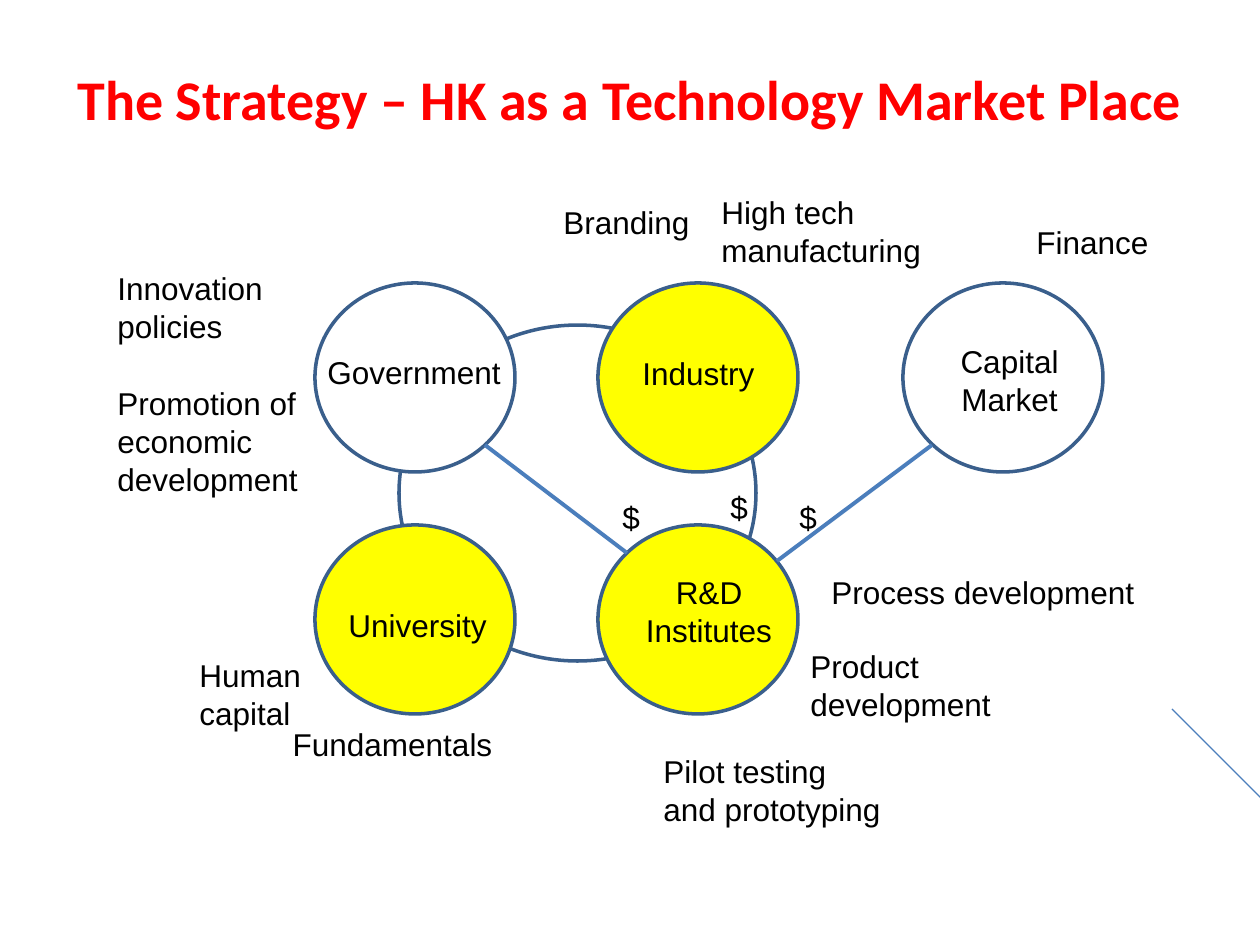
from lxml.etree import SubElement
from pptx import Presentation
from pptx.dml.color import RGBColor
from pptx.enum.shapes import MSO_CONNECTOR as Connector, MSO_SHAPE as Shape
from pptx.enum.text import MSO_ANCHOR as Anchor, PP_ALIGN as Align
from pptx.oxml.ns import qn
from pptx.util import Emu, Pt

PX = 914400 / 126
WHITE = RGBColor(0xFF, 0xFF, 0xFF)
YELLOW = RGBColor(0xFF, 0xFF, 0x00)
RED = RGBColor(0xFF, 0x00, 0x00)
BLACK = RGBColor(0x00, 0x00, 0x00)
OUTLINE = RGBColor(0x3A, 0x5F, 0x8C)
LINK = RGBColor(0x4B, 0x7E, 0xBC)

LABEL_FONT = {"name": "Arial", "size": Pt(18), "bold": False}
TITLE_FONT = {"name": "Calibri", "size": Pt(32), "bold": True}


def px(*lengths):
    return [Emu(round(length * PX)) for length in lengths]


def add_text(words, box, align=Align.LEFT, font=LABEL_FONT, color=BLACK,
             anchor=Anchor.TOP, wrap=True):
    frame = slide.shapes.add_textbox(*px(*box)).text_frame
    frame.word_wrap = wrap
    frame.vertical_anchor = anchor
    paragraph = frame.paragraphs[0]
    paragraph.alignment = align
    run = paragraph.add_run()
    run.text = words
    for key, value in font.items():
        setattr(run.font, key, value)
    run.font.color.rgb = color


prs = Presentation()
prs.slide_width, prs.slide_height = px(1260, 945)
slide = prs.slides.add_slide(prs.slide_layouts[6])

# Circles of the players, with the ring that ties four of them together
COLUMNS = [315, 598, 903]
ROWS = [283, 525]
CIRCLE = (200, 189)
circles = [
    ((COLUMNS[2], ROWS[0], *CIRCLE), WHITE),    # capital market
    ((399, 325, 357, 336), None),               # ring
    ((COLUMNS[0], ROWS[0], *CIRCLE), WHITE),    # government
    ((COLUMNS[0], ROWS[1], *CIRCLE), YELLOW),   # university
    ((COLUMNS[1], ROWS[1], *CIRCLE), YELLOW),   # R&D institutes
    ((COLUMNS[1], ROWS[0], *CIRCLE), YELLOW),   # industry
]
for box, color in circles:
    circle = slide.shapes.add_shape(Shape.OVAL, *px(*box))
    circle.shadow.inherit = False
    if color is None:
        circle.fill.background()
    else:
        circle.fill.solid()
        circle.fill.fore_color.rgb = color
    circle.line.color.rgb = OUTLINE
    circle.line.width = Pt(2)

# Title
add_text("The Strategy – HK as a Technology Market Place", (63, 38, 1134, 120),
         Align.CENTER, TITLE_FONT, RED, Anchor.MIDDLE)

# Names of the players and their roles
ONE, TWO, THREE = 50, 89, 127   # heights by number of lines
labels = [
    ("Government", (315, 347, 220, ONE), Align.LEFT),
    ("Industry", (630, 348, 158, ONE), Align.LEFT),
    ("University", (336, 600, 168, ONE), Align.LEFT),
    ("R&D Institutes", (630, 567, 158, TWO), Align.CENTER),
    ("Capital Market", (936, 336, 147, TWO), Align.CENTER),
    ("Innovation policies", (105, 263, 176, TWO), Align.LEFT),
    ("Promotion of economic development", (105, 378, 210, THREE), Align.LEFT),
    ("Human capital", (187, 650, 189, TWO), Align.LEFT),
    ("Fundamentals", (256, 719, 273, ONE), Align.CENTER),
    ("Branding", (551, 197, 189, ONE), Align.LEFT),
    ("High tech manufacturing", (709, 187, 252, TWO), Align.LEFT),
    ("Finance", (1024, 217, 199, ONE), Align.LEFT),
    ("Process development", (819, 567, 420, ONE), Align.LEFT),
    ("Product development", (798, 641, 273, TWO), Align.LEFT),
    ("Pilot testing and prototyping", (651, 746, 245, TWO), Align.LEFT),
]
for words, box, align in labels:
    add_text(words, box, align)

# Money flows, and the stray line in the corner
lines = [
    ((777, 561, 932, 445), 2.25),
    ((485, 445, 627, 553), 2.25),
    ((1172, 709, 1298, 835), 0.75),
]
for ends, width in lines:
    flow = slide.shapes.add_connector(Connector.STRAIGHT, *px(*ends))
    flow.line.color.rgb = LINK
    flow.line.width = Pt(width)
    SubElement(flow._element.spPr, qn("a:effectLst"))

for left, top in [(787, 492), (718, 482), (610, 492)]:
    add_text("$", (left, top, 43, ONE), wrap=False)

prs.save("out.pptx")
